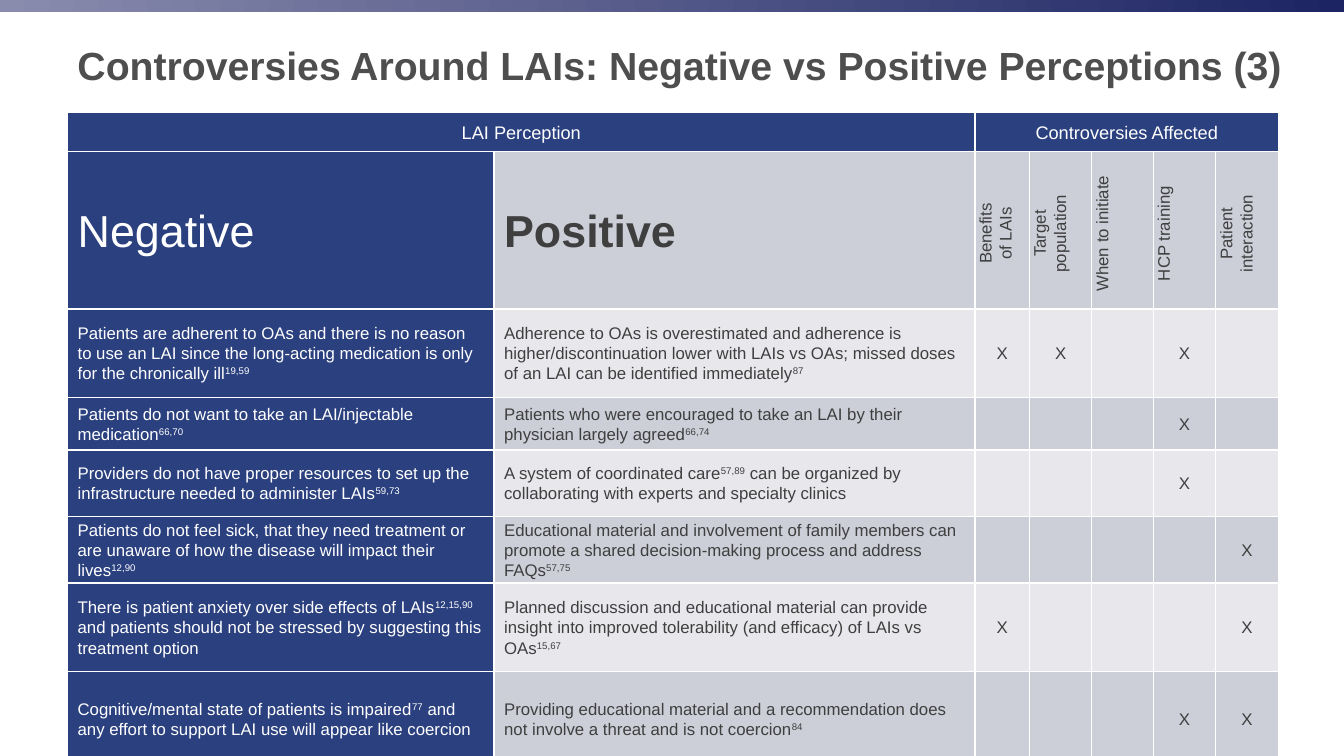
from pptx import Presentation
from pptx.dml.color import RGBColor
from pptx.enum.shapes import MSO_SHAPE as Shape
from pptx.enum.text import MSO_ANCHOR as Anchor, PP_ALIGN as Align
from pptx.oxml import parse_xml
from pptx.oxml.ns import nsdecls
from pptx.util import Inches, Pt

WIDTH, HEIGHT = 13.33, 7.5
NAVY, WHITE, INK = "2B407E", "FFFFFF", "3F3F3F"
BANDS = ["E8E8EC", "CDCFD8"]
COLUMNS = [4.23, 4.77, 0.54, 0.62, 0.61, 0.62, 0.62]
ROWS = [0.38, 1.5, 0.88, 0.52, 0.66, 0.66, 0.88, 0.93]
TOPICS = ["Benefits\vof LAIs", "Target population", "When to initiate",
          "HCP training", "Patient interaction"]
PERCEPTIONS = [
    ("Patients are adherent to OAs and there is no reason to use an LAI since the "
     "long-acting medication is only for the chronically ill^19,59",
     "Adherence to OAs is overestimated and adherence is higher/discontinuation lower "
     "with LAIs vs OAs; missed doses of an LAI can be identified immediately^87",
     [0, 1, 3]),
    ("Patients do not want to take an LAI/injectable medication^66,70",
     "Patients who were encouraged to take an LAI by their physician largely agreed^66,74",
     [3]),
    ("Providers do not have proper resources to set up the infrastructure needed to "
     "administer LAIs^59,73",
     "A system of coordinated care^57,89^ can be organized by collaborating with "
     "experts and specialty clinics",
     [3]),
    ("Patients do not feel sick, that they need treatment or are unaware of how the "
     "disease will impact their lives^12,90",
     "Educational material and involvement of family members can promote a shared "
     "decision-making process and address FAQs^57,75",
     [4]),
    ("There is patient anxiety over side effects of LAIs^12,15,90^ and patients should "
     "not be stressed by suggesting this treatment option",
     "Planned discussion and educational material can provide insight into improved "
     "tolerability (and efficacy) of LAIs vs OAs^15,67",
     [0, 4]),
    ("Cognitive/mental state of patients is impaired^77^ and any effort to support LAI "
     "use will appear like coercion",
     "Providing educational material and a recommendation does not involve a threat "
     "and is not coercion^84",
     [3, 4]),
]


def rgb(code):
    """Turn a hex string into a colour."""
    return RGBColor.from_string(code)


def write(paragraph, text, size, color, bold=False):
    """Write text whose parts between carets are superscript references."""
    first, *others = text.split("^")
    paragraph.text = first
    for index, part in enumerate(others):
        run = paragraph.add_run()
        run.text = part
        if index % 2 == 0:
            run._r.get_or_add_rPr().set("baseline", "30000")
    for run in paragraph.runs:
        run.font.name, run.font.size, run.font.bold = "Arial", Pt(size), bold
        run.font.color.rgb = rgb(color)


def fill_cell(cell, fill, text="", size=12, color=INK, bold=False, centred=False):
    """Give a cell its white borders, fill, insets and text."""
    properties = cell._tc.get_or_add_tcPr()
    for side in "LRTB":
        properties.append(parse_xml(
            f'<a:ln{side} {nsdecls("a")} w="{Pt(1)}"><a:solidFill>'
            f'<a:srgbClr val="{WHITE}"/></a:solidFill></a:ln{side}>'))
    cell.fill.solid()
    cell.fill.fore_color.rgb = rgb(fill)
    cell.vertical_anchor = Anchor.MIDDLE
    cell.margin_left = cell.margin_right = Inches(0.03 if centred else 0.1)
    cell.margin_top = cell.margin_bottom = 0
    paragraph = cell.text_frame.paragraphs[0]
    paragraph.line_spacing = 1.07
    paragraph.alignment = Align.CENTER if centred else Align.LEFT
    write(paragraph, text, size, color, bold)


def fill_topic(cell, topic):
    """Write a controversy heading that reads upwards."""
    fill_cell(cell, BANDS[1], topic, centred=True)
    cell._tc.get_or_add_tcPr().set("vert", "vert270")
    indents = cell.text_frame.paragraphs[0]._p.get_or_add_pPr()
    indents.set("marL", str(Inches(0.08)))
    indents.set("marR", str(Inches(0.15)))


def add_top_band(slide, left, top, width, height):
    """Draw the gradient band along the upper edge."""
    band = slide.shapes.add_shape(
        Shape.RECTANGLE, *map(Inches, (left, top, width, height)))
    band.shadow.inherit = False
    band.line.fill.background()
    band.fill.gradient()
    band.fill.gradient_angle = 0
    for stop, color in zip(band.fill.gradient_stops, ["898CAD", "1C2463"]):
        stop.color.rgb = rgb(color)


def add_title(slide, left, top, width, height):
    """Place the slide title."""
    frame = slide.shapes.add_textbox(
        *map(Inches, (left, top, width, height))).text_frame
    frame.word_wrap = True
    frame.vertical_anchor = Anchor.MIDDLE
    write(frame.paragraphs[0],
          "Controversies Around LAIs: Negative vs Positive Perceptions (3)",
          28, "4D4E4D", bold=True)


def add_perceptions(slide, left, top):
    """Place the table of perceptions and the controversies they affect."""
    box = map(Inches, (left, top, sum(COLUMNS), sum(ROWS)))
    table = slide.shapes.add_table(len(ROWS), len(COLUMNS), *box).table
    for column, width in zip(table.columns, COLUMNS):
        column.width = Inches(width)
    for row, height in zip(table.rows, ROWS):
        row.height = Inches(height)

    headings = {0: "LAI Perception", 2: "Controversies Affected"}
    for col in range(len(COLUMNS)):
        fill_cell(table.cell(0, col), NAVY, headings.get(col, ""), 13, WHITE,
                  centred=True)
    table.cell(0, 0).merge(table.cell(0, 1))
    table.cell(0, 2).merge(table.cell(0, len(COLUMNS) - 1))

    fill_cell(table.cell(1, 0), NAVY, "Negative", 32, WHITE)
    fill_cell(table.cell(1, 1), BANDS[1], "Positive", 32, bold=True)
    for col, topic in enumerate(TOPICS, 2):
        fill_topic(table.cell(1, col), topic)

    for row, (negative, positive, affected) in enumerate(PERCEPTIONS, 2):
        band = BANDS[row % 2]
        fill_cell(table.cell(row, 0), NAVY, negative, color=WHITE)
        fill_cell(table.cell(row, 1), band, positive)
        for topic in range(len(TOPICS)):
            fill_cell(table.cell(row, topic + 2), band,
                      "X" if topic in affected else "", centred=True)


def main():
    """Build and save the slide."""
    deck = Presentation()
    deck.slide_width, deck.slide_height = Inches(WIDTH), Inches(HEIGHT)
    slide = deck.slides.add_slide(deck.slide_layouts[6])
    add_top_band(slide, 0, 0, WIDTH, 0.12)
    add_title(slide, 0.67, 0.22, 12.19, 0.85)
    add_perceptions(slide, 0.67, 1.12)
    deck.save("out.pptx")


if __name__ == "__main__":
    main()
